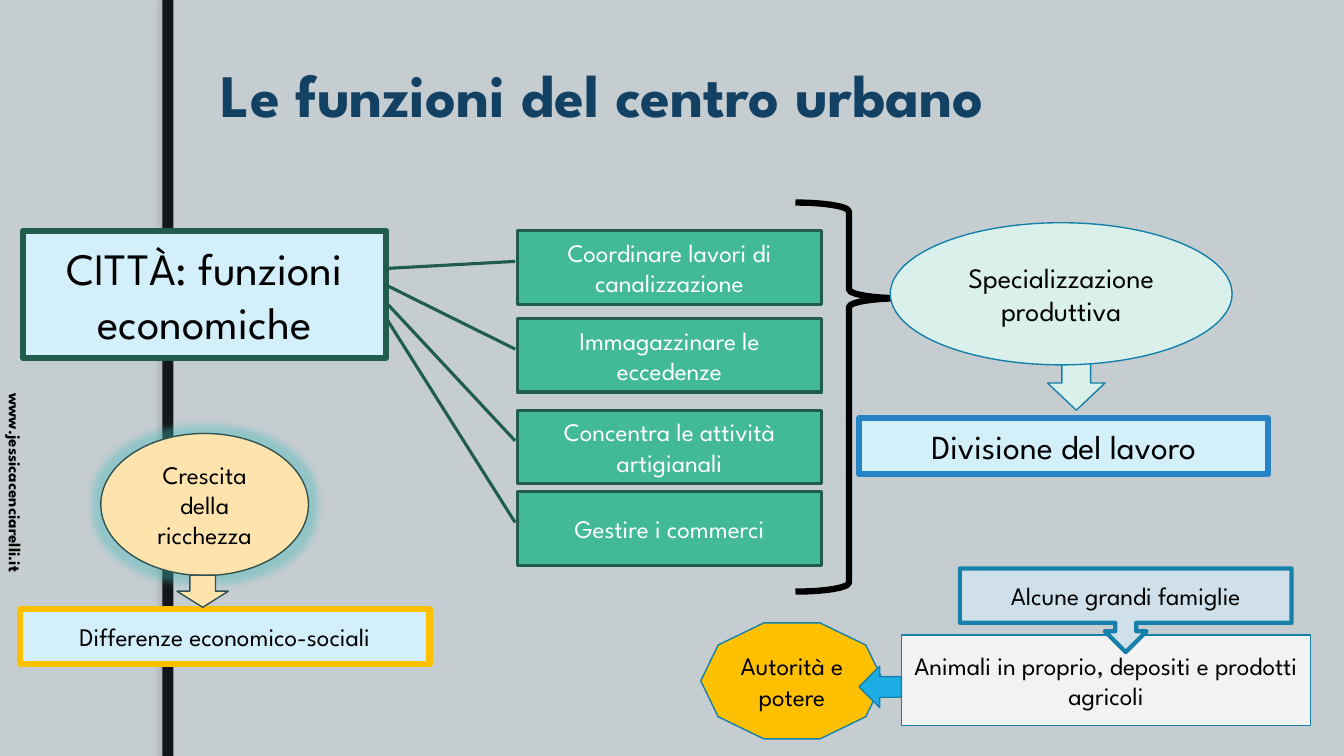
import pptx
import pptx.dml.color
import pptx.enum.shapes
import pptx.enum.text
import pptx.oxml
import pptx.util
from pptx.util import Inches

SHAPE = pptx.enum.shapes.MSO_SHAPE
ALIGN = pptx.enum.text.PP_ALIGN
ANCHOR = pptx.enum.text.MSO_ANCHOR
FONT = "League Spartan"
NS = 'xmlns:a="http://schemas.openxmlformats.org/drawingml/2006/main"'
COLORS = {
    "background": "C6CDD1", "bar": "141719", "black": "000000", "white": "FFFFFF",
    "title": "134163", "green": "42BA97", "dark_green": "215D4C", "sky": "D2EFFA",
    "blue": "2683C6", "mint": "D9F1EA", "teal": "1580A9", "cream": "FEE3AC",
    "slate": "305250", "gold": "FFC000", "gray": "F2F2F2", "cyan": "1CADE4",
    "mist": "CFE0EA", "glow": "42BABA", "shadow": "6F7172",
}
FUNCTIONS = [
    (2.29, "Coordinare lavori di canalizzazione"),
    (3.16, "Immagazzinare le eccedenze"),
    (4.07, "Concentra le attività artigianali"),
    (4.88, "Gestire i commerci"),
]


def rgb(name):
    """Return the named colour."""
    return pptx.dml.color.RGBColor.from_string(COLORS[name])


def write(sp, text, size=18, color="black", bold=False, align=ALIGN.CENTER):
    """Put formatted text in a shape."""
    tf = sp.text_frame
    tf.word_wrap = True
    tf.vertical_anchor = ANCHOR.MIDDLE
    p = tf.paragraphs[0]
    p.alignment = align
    r = p.add_run()
    r.text = text
    r.font.name = FONT
    r.font.size = pptx.util.Pt(size)
    r.font.bold = bold
    r.font.color.rgb = rgb(color)


def add_text(s, box, text, rotation=0, **style):
    """Add a text box."""
    sp = s.shapes.add_textbox(*map(Inches, box))
    sp.rotation = rotation
    write(sp, text, **style)


def add_shape(s, kind, box, fill=None, line=None, width=1, text=None, rotation=0, **style):
    """Add a preset shape with optional text."""
    sp = s.shapes.add_shape(kind, *map(Inches, box))
    sp.shadow.inherit = False
    sp.rotation = rotation
    if fill:
        sp.fill.solid()
        sp.fill.fore_color.rgb = rgb(fill)
    else:
        sp.fill.background()
    if line:
        sp.line.color.rgb = rgb(line)
        sp.line.width = pptx.util.Pt(width)
    else:
        sp.line.fill.background()
    if text:
        write(sp, text, **style)
    return sp


def add_effect(sp, tag, attributes, color, alpha):
    """Add a glow or shadow to a shape."""
    effects = sp._element.spPr.find(pptx.oxml.ns.qn("a:effectLst"))
    effects.append(pptx.oxml.parse_xml(
        f'<a:{tag} {NS} {attributes}><a:srgbClr val="{COLORS[color]}">'
        f'<a:alpha val="{alpha * 1000}"/></a:srgbClr></a:{tag}>'))


def add_function(s, top, text):
    """Add a callout whose leader starts inside the city box."""
    left, width, height = 5.13, 3.02, 0.73
    origin_x, origin_y = 3.53, 2.68
    sp = add_shape(s, SHAPE.LINE_CALLOUT_1, (left, top, width, height), "green",
                   "dark_green", 2.25, text, color="white")
    leader = ((origin_y - top) / height, (origin_x - left) / width, 0.416, -0.007)
    for i, value in enumerate(leader):
        sp.adjustments[i] = value


def add_frame(s):
    """Add the background, side bar, web address and title."""
    s.background.fill.solid()
    s.background.fill.fore_color.rgb = rgb("background")
    bar = add_shape(s, SHAPE.RECTANGLE, (1.61, 0, 0.11, 7.5), "bar")
    add_effect(bar, "outerShdw", 'blurRad="38100" dist="38100" dir="10800000"', "shadow", 25)
    add_text(s, (-1.41, 4.64, 3.13, 0.3), "www.jessicacenciarelli.it", rotation=90,
             size=12, bold=True)
    add_text(s, (2.09, 0.3, 10.93, 1.25), "Le funzioni del centro urbano", size=43,
             color="title", bold=True, align=ALIGN.LEFT)


def main():
    """Build the slide and save it."""
    prs = pptx.Presentation()
    prs.slide_width, prs.slide_height = Inches(13.33), Inches(7.5)
    s = prs.slides.add_slide(prs.slide_layouts[6])
    add_frame(s)
    for top, text in FUNCTIONS:
        add_function(s, top, text)
    add_shape(s, SHAPE.RECTANGLE, (8.52, 4.15, 4.06, 0.55), "sky", "blue", 4.5,
              "Divisione del lavoro", size=24)
    brace = add_shape(s, SHAPE.RIGHT_BRACE, (7.89, 2.01, 1.06, 3.86), None, "black", 4.5)
    brace.adjustments[1] = 0.246
    add_shape(s, SHAPE.DOWN_ARROW, (10.39, 3.53, 0.57, 0.54), "mint", "teal")
    wealth = add_shape(s, SHAPE.OVAL, (1, 4.3, 2.06, 1.41), "cream", "slate",
                       text="Crescita della ricchezza")
    add_effect(wealth, "glow", 'rad="139700"', "glow", 40)
    add_shape(s, SHAPE.RECTANGLE, (0.2, 6.04, 4.06, 0.55), "sky", "gold", 4.5,
              "Differenze economico-sociali")
    add_shape(s, SHAPE.RIGHT_ARROW, (1.85, 5.61, 0.32, 0.51), "cream", "slate", rotation=90)
    add_shape(s, SHAPE.RECTANGLE, (0.23, 2.29, 3.6, 1.26), "sky", "dark_green", 4.5,
              "CITTÀ: funzioni economiche", size=32)
    add_shape(s, SHAPE.RECTANGLE, (8.94, 6.3, 4.06, 0.9), "gray", "teal",
              text="Animali in proprio, depositi e prodotti agricoli")
    add_shape(s, SHAPE.DECAGON, (6.95, 6.18, 1.81, 1.15), "gold", "teal",
              text="Autorità e potere")
    add_shape(s, SHAPE.LEFT_ARROW, (8.52, 6.61, 0.42, 0.41), "cyan", "teal")
    add_shape(s, SHAPE.OVAL, (8.83, 2.21, 3.39, 1.41), "mint", "teal",
              text="Specializzazione produttiva", size=20)
    add_shape(s, SHAPE.DOWN_ARROW_CALLOUT, (9.52, 5.64, 3.29, 0.83), "mist", "teal", 3,
              "Alcune grandi famiglie")
    prs.save("out.pptx")


if __name__ == "__main__":
    main()
